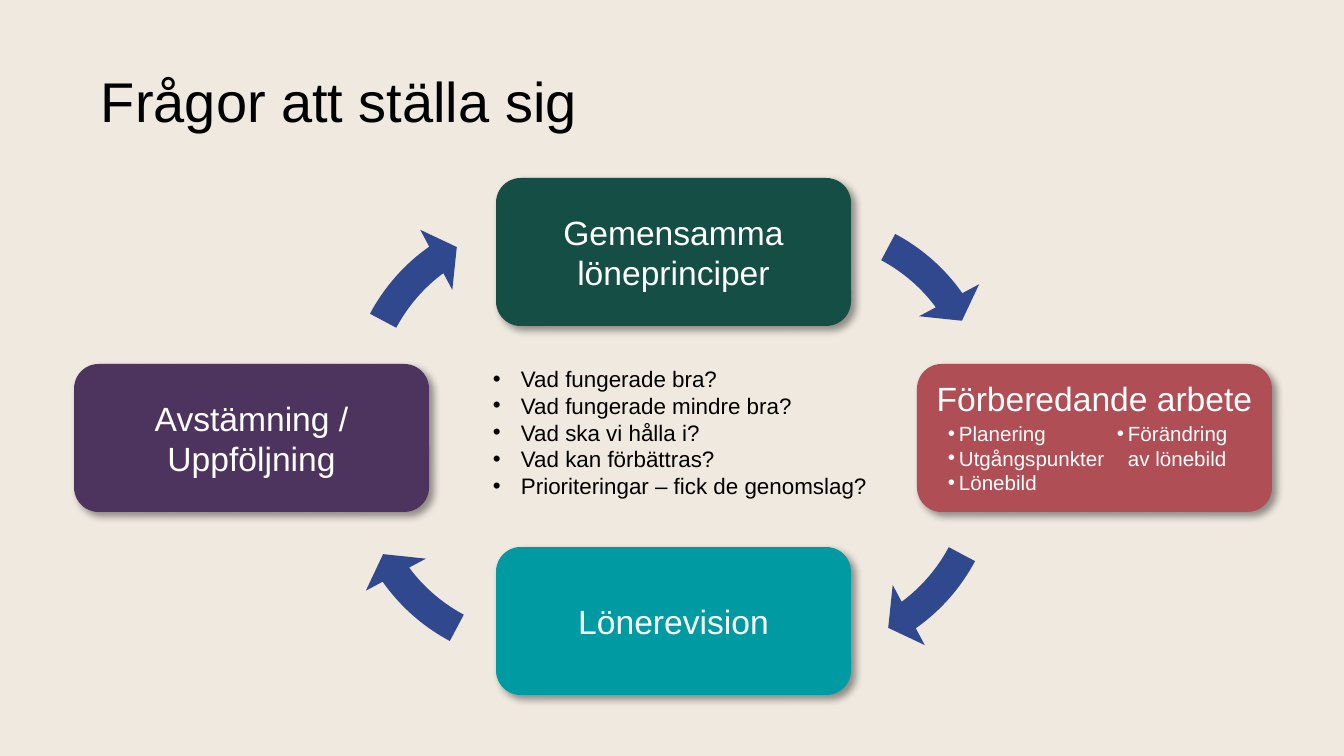
import dataclasses
import typing

import pptx
import pptx.dml.color
import pptx.enum.shapes
import pptx.enum.text
import pptx.oxml
import pptx.oxml.ns
import pptx.util

EMU_PER_PX = 914400 / 134.4
FONT = "Arial"
WHITE, BLACK, BLUE = "FFFFFF", "000000", "30488E"
CARD_WIDTH, CARD_HEIGHT = 355, 148
ARROW_SIZE = 426


@dataclasses.dataclass
class Card:
    text: str
    left: int
    top: int
    fill: str
    side_inset: int = 13
    at_top: bool = False


@dataclasses.dataclass
class BulletList:
    lines: list[str]
    left: int
    top: int
    width: int
    height: int
    size: int
    color: str
    indent: int
    insets: tuple[int, int] = (0, 0)


def px(length: int) -> pptx.util.Emu:
    return pptx.util.Emu(round(length * EMU_PER_PX))


def rgb(color: str) -> pptx.dml.color.RGBColor:
    return pptx.dml.color.RGBColor.from_string(color)


def set_font(para: typing.Any, size: int, color: str) -> None:
    para.font.name = FONT
    para.font.size = pptx.util.Pt(size)
    para.font.color.rgb = rgb(color)


def set_frame(frame: typing.Any, side: int, end: int, middle: bool) -> None:
    anchors = pptx.enum.text.MSO_ANCHOR
    frame.word_wrap = True
    frame.margin_left = frame.margin_right = px(side)
    frame.margin_top = frame.margin_bottom = px(end)
    frame.vertical_anchor = anchors.MIDDLE if middle else anchors.TOP


def add_filled(page: typing.Any, kind: typing.Any, left: int, top: int,
               width: int, height: int, fill: str) -> typing.Any:
    shape = page.shapes.add_shape(kind, px(left), px(top), px(width), px(height))
    shape.shadow.inherit = False
    shape.fill.solid()
    shape.fill.fore_color.rgb = rgb(fill)
    shape.line.fill.background()
    return shape


def add_title(page: typing.Any, text: str) -> None:
    box = page.shapes.add_textbox(px(101), px(31), px(1099), px(146))
    set_frame(box.text_frame, 0, 0, True)
    para = box.text_frame.paragraphs[0]
    para.text = text
    para.line_spacing = 0.9
    set_font(para, 30, BLACK)


def add_arrow(page: typing.Any, left: int, top: int, turn: int) -> None:
    kind = pptx.enum.shapes.MSO_SHAPE.CIRCULAR_ARROW
    arrow = add_filled(page, kind, left, top, ARROW_SIZE, ARROW_SIZE, BLUE)
    arrow.rotation = 45
    # Angles count 0.6 degrees each; a full turn is 216
    step = 54 * turn
    values = (0.07, 4.65, 5.51 + step, (205.84 + step) % 216, 0.08)
    for index, value in enumerate(values):
        arrow.adjustments[index] = value


def add_card(page: typing.Any, card: Card) -> None:
    kind = pptx.enum.shapes.MSO_SHAPE.ROUNDED_RECTANGLE
    box = add_filled(page, kind, card.left, card.top,
                     CARD_WIDTH, CARD_HEIGHT, card.fill)
    effects = box._element.spPr.find(pptx.oxml.ns.qn("a:effectLst"))
    effects.append(pptx.oxml.parse_xml(
        f'<a:outerShdw {pptx.oxml.ns.nsdecls("a")} blurRad="50800" dist="38100" '
        'dir="2700000" algn="tl" rotWithShape="0"><a:srgbClr val="000000">'
        '<a:alpha val="40000"/></a:srgbClr></a:outerShdw>'))
    set_frame(box.text_frame, card.side_inset, 7, not card.at_top)
    para = box.text_frame.paragraphs[0]
    para.text = card.text
    para.alignment = pptx.enum.text.PP_ALIGN.CENTER
    set_font(para, 18, WHITE)


def add_bullets(page: typing.Any, bullets: BulletList) -> None:
    box = page.shapes.add_textbox(px(bullets.left), px(bullets.top),
                                  px(bullets.width), px(bullets.height))
    frame = box.text_frame
    set_frame(frame, *bullets.insets, False)
    for index, line in enumerate(bullets.lines):
        para = frame.add_paragraph() if index else frame.paragraphs[0]
        para.text = line
        props = para._p.get_or_add_pPr()
        props.set("marL", str(px(bullets.indent)))
        props.set("indent", str(-px(bullets.indent)))
        props.append(pptx.oxml.parse_xml(
            f'<a:buFont {pptx.oxml.ns.nsdecls("a")} typeface="{FONT}"/>'))
        props.append(pptx.oxml.parse_xml(
            f'<a:buChar {pptx.oxml.ns.nsdecls("a")} char="•"/>'))
        set_font(para, bullets.size, bullets.color)


# Arrow positions, clockwise from the lower right
ARROWS = [(591, 257), (328, 257), (328, 192), (591, 192)]

CARDS = [
    Card("Avstämning / Uppföljning", 74, 364, "4D345F", side_inset=0),
    Card("Lönerevision", 496, 547, "009BA2"),
    Card("Gemensamma löneprinciper", 496, 178, "154E45"),
    Card("Förberedande arbete", 917, 364, "AF4E55", side_inset=0, at_top=True),
]

LISTS = [
    BulletList(["Planering", "Utgångspunkter", "Lönebild"],
               948, 421, 160, 66, 11, WHITE, 11),
    BulletList(["Förändring av lönebild"], 1117, 421, 125, 83, 11, WHITE, 11),
    BulletList(["Vad fungerade bra?", "Vad fungerade mindre bra?",
                "Vad ska vi hålla i?", "Vad kan förbättras?",
                "Prioriteringar – fick de genomslag?"],
               480, 358, 434, 176, 12, BLACK, 28, insets=(13, 7)),
]


def main() -> None:
    deck = pptx.Presentation()
    deck.slide_width, deck.slide_height = px(1344), px(756)
    page = deck.slides.add_slide(deck.slide_layouts[6])
    page.background.fill.solid()
    page.background.fill.fore_color.rgb = rgb("EFE9DF")

    add_title(page, "Frågor att ställa sig")
    for turn, (left, top) in enumerate(ARROWS):
        add_arrow(page, left, top, turn)
    for card in CARDS:
        add_card(page, card)
    for bullets in LISTS:
        add_bullets(page, bullets)
    deck.save("out.pptx")


if __name__ == "__main__":
    main()
